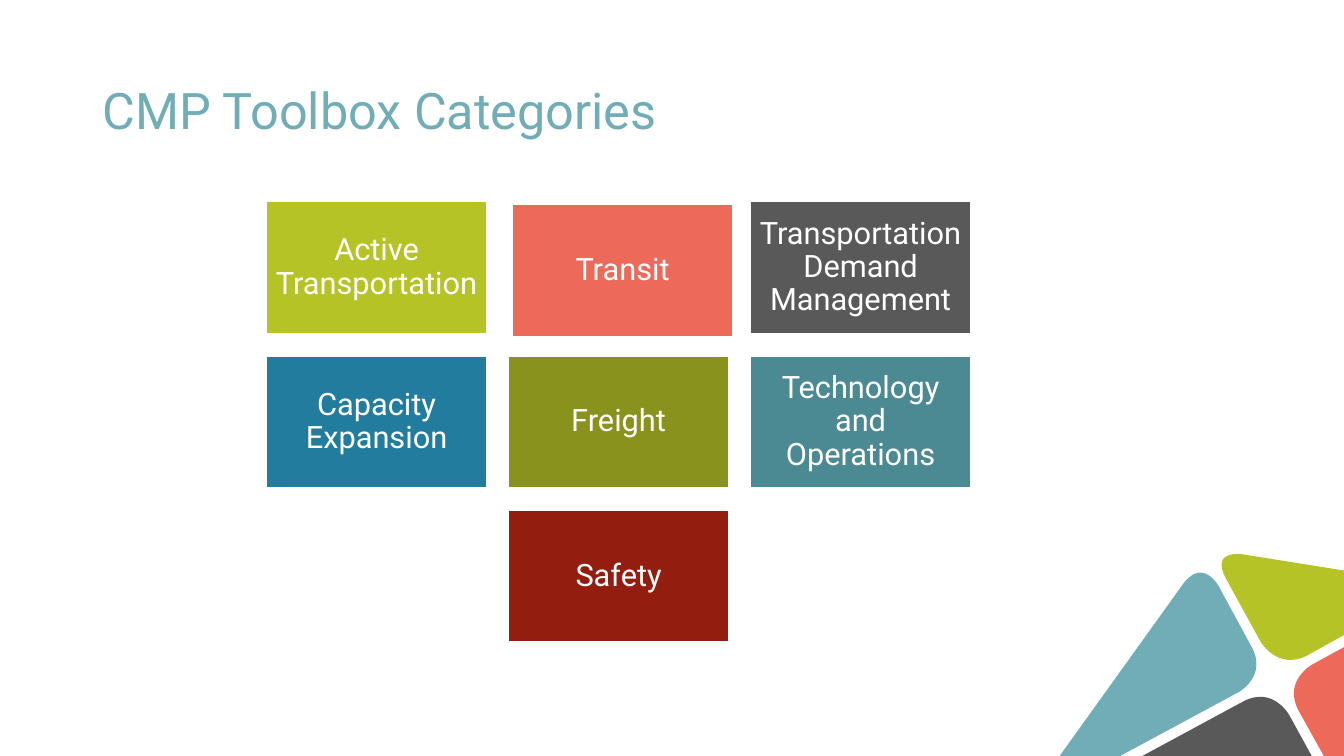
"""Build the CMP Toolbox Categories slide."""
import copy
from dataclasses import dataclass
from typing import Any

import lxml.etree
import pptx
import pptx.dml.color
import pptx.enum.shapes
import pptx.enum.text
import pptx.oxml.ns
import pptx.shapes.autoshape
import pptx.slide
import pptx.text.text
import pptx.util

RGBColor = pptx.dml.color.RGBColor
Inches = pptx.util.Inches
Point = tuple[float, float]

WHITE = RGBColor(0xFF, 0xFF, 0xFF)
LIME = RGBColor(0xB5, 0xC3, 0x27)
CORAL = RGBColor(0xED, 0x6A, 0x5A)
GRAY = RGBColor(0x59, 0x59, 0x59)
BLUE = RGBColor(0x22, 0x7C, 0x9D)
OLIVE = RGBColor(0x88, 0x92, 0x1D)
TEAL = RGBColor(0x4B, 0x89, 0x93)
MAROON = RGBColor(0x93, 0x1E, 0x10)
SKY = RGBColor(0x71, 0xAD, 0xB7)

SLIDE_WIDTH, SLIDE_HEIGHT = 13.33, 7.5
GRID_LEFT, GRID_TOP = 2.64, 2.0
COLUMN_STEP, ROW_STEP = 2.4, 1.53
TILE_WIDTH, TILE_HEIGHT = 2.19, 1.31

TITLE_FRAME = {
    "word_wrap": True,
    "vertical_anchor": pptx.enum.text.MSO_ANCHOR.MIDDLE,
}
TILE_FRAME = TITLE_FRAME | {
    f"margin_{side}": Inches(0.08) for side in ("left", "top", "right", "bottom")
}


@dataclass(frozen=True)
class Tile:
    label: str
    color: RGBColor
    column: int
    row: int
    shift: Point = (0, 0)


@dataclass(frozen=True)
class Corner:
    control: Point
    end: Point


@dataclass(frozen=True)
class Petal:
    color: RGBColor
    start: Point
    steps: tuple[Point | Corner, ...]


TILES = (
    Tile("Active Transportation", LIME, 0, 0),
    Tile("Transit", CORAL, 1, 0, (0.04, 0.03)),
    Tile("Transportation Demand Management", GRAY, 2, 0),
    Tile("Capacity Expansion", BLUE, 0, 1),
    Tile("Freight", OLIVE, 1, 1),
    Tile("Technology and Operations", TEAL, 2, 1),
    Tile("Safety", MAROON, 1, 2),
)

PETALS = (
    Petal(CORAL, (SLIDE_WIDTH, 6.42), (
        (13.02, 6.59), Corner((12.72, 6.75), (12.88, 7.05)),
        (13.13, SLIDE_HEIGHT), (SLIDE_WIDTH, SLIDE_HEIGHT))),
    Petal(LIME, (12.16, 5.74), (
        (12.5, 6.36), Corner((12.67, 6.66), (12.97, 6.5)),
        (SLIDE_WIDTH, 6.3), (SLIDE_WIDTH, 5.66),
        (12.33, 5.5), Corner((12, 5.44), (12.16, 5.74)))),
    Petal(GRAY, (12.33, 6.96), (
        (11.33, SLIDE_HEIGHT), (13.01, SLIDE_HEIGHT),
        (12.79, 7.1), Corner((12.63, 6.8), (12.33, 6.96)))),
    Petal(SKY, (12.41, 6.41), (
        (12.09, 5.82), Corner((11.93, 5.52), (11.73, 5.8)),
        (10.51, SLIDE_HEIGHT), (11.11, SLIDE_HEIGHT),
        (12.28, 6.87), Corner((12.58, 6.71), (12.41, 6.41)))),
)


def apply_format(target: Any, values: dict[str, Any]) -> None:
    """Set every named attribute on the target."""
    for name, value in values.items():
        setattr(target, name, value)


def fill_shape(shape: pptx.shapes.autoshape.Shape, color: RGBColor) -> None:
    """Give the shape a flat fill without a shadow."""
    shape.shadow.inherit = False
    shape.fill.solid()
    shape.fill.fore_color.rgb = color


def write_text(frame: pptx.text.text.TextFrame, text: str, size: int, color: RGBColor,
               frame_format: dict[str, Any], alignment: pptx.enum.text.PP_ALIGN) -> None:
    """Write one formatted paragraph into the frame."""
    apply_format(frame, frame_format)
    paragraph = frame.paragraphs[0]
    apply_format(paragraph, {"alignment": alignment, "line_spacing": 0.9})
    run = paragraph.add_run()
    run.text = text
    apply_format(run.font, {"name": "Roboto", "size": pptx.util.Pt(size)})
    run.font.color.rgb = color


def round_corner(nodes: list[lxml.etree._Element], control_index: int) -> None:
    """Turn the two line segments that meet at a control point into one curve."""
    start, control, end = nodes[control_index - 1:control_index + 2]
    control_line, end_line = control.getparent(), end.getparent()
    curve = control_line.makeelement(pptx.oxml.ns.qn("a:cubicBezTo"))
    control_line.addprevious(curve)
    curve.extend([copy.deepcopy(start), control, end])
    for line in (control_line, end_line):
        line.getparent().remove(line)


def draw_petal(slide: pptx.slide.Slide, petal: Petal) -> None:
    """Draw one petal of the corner ornament."""
    points = [petal.start]
    control_indexes = []
    for step in petal.steps:
        if isinstance(step, Corner):
            control_indexes.append(len(points))
            points += [step.control, step.end]
        else:
            points.append(step)
    vertices = [(Inches(x), Inches(y)) for x, y in points]
    builder = slide.shapes.build_freeform(*vertices[0])
    builder.add_line_segments(vertices[1:], close=True)
    shape = builder.convert_to_shape()
    nodes = list(shape.element.iter(pptx.oxml.ns.qn("a:pt")))
    for control_index in control_indexes:
        round_corner(nodes, control_index)
    fill_shape(shape, petal.color)
    shape.line.fill.background()


def draw_tile(slide: pptx.slide.Slide, tile: Tile) -> None:
    """Draw one category tile on the grid."""
    left = GRID_LEFT + tile.column * COLUMN_STEP + tile.shift[0]
    top = GRID_TOP + tile.row * ROW_STEP + tile.shift[1]
    shape = slide.shapes.add_shape(
        pptx.enum.shapes.MSO_SHAPE.RECTANGLE,
        Inches(left), Inches(top), Inches(TILE_WIDTH), Inches(TILE_HEIGHT))
    fill_shape(shape, tile.color)
    shape.line.color.rgb = WHITE
    shape.line.width = pptx.util.Pt(1)
    write_text(shape.text_frame, tile.label, 22, WHITE, TILE_FRAME,
               pptx.enum.text.PP_ALIGN.CENTER)


def main() -> None:
    """Build and save the presentation."""
    presentation = pptx.Presentation()
    apply_format(presentation, {
        "slide_width": Inches(SLIDE_WIDTH), "slide_height": Inches(SLIDE_HEIGHT)})
    slide = presentation.slides.add_slide(presentation.slide_layouts[6])
    for petal in PETALS:
        draw_petal(slide, petal)
    title = slide.shapes.add_textbox(Inches(0.92), Inches(0.4), Inches(11.5), Inches(1.45))
    write_text(title.text_frame, "CMP Toolbox Categories", 36, SKY, TITLE_FRAME,
               pptx.enum.text.PP_ALIGN.LEFT)
    for tile in TILES:
        draw_tile(slide, tile)
    presentation.save("out.pptx")


if __name__ == "__main__":
    main()
